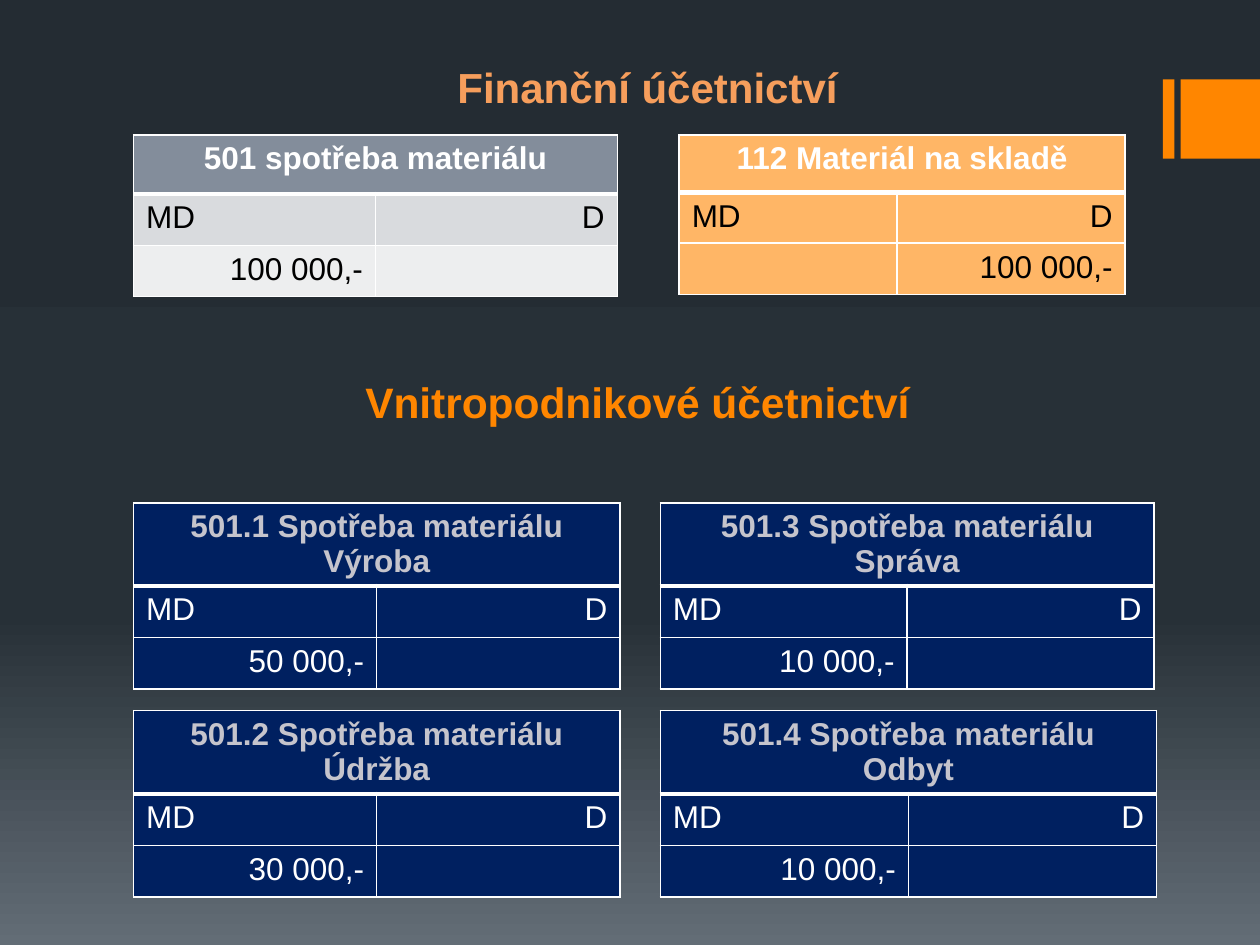
from copy import deepcopy

from lxml.etree import SubElement
from pptx import Presentation
from pptx.dml.color import RGBColor
from pptx.enum.shapes import MSO_SHAPE as Shape
from pptx.enum.text import MSO_ANCHOR as Anchor, MSO_AUTO_SIZE as AutoSize, PP_ALIGN as Align
from pptx.oxml.ns import qn
from pptx.util import Inches, Pt

ORANGE, WHITE, BLACK, NAVY, PALE = "FF8600", "FFFFFF", "000000", "002060", "C5C4CC"
APRICOT = "FFB666"


def color(value):
    return RGBColor.from_string(value)


def set_attributes(target, values):
    for name, value in values.items():
        setattr(target, name, value)


class SlideBuilder:
    font_name = "Arial"
    table_size = 18

    def __init__(self, presentation):
        self.slide = presentation.slides.add_slide(presentation.slide_layouts[1])

    def background(self, stops):
        fill = self.slide.background.fill
        fill.gradient()
        fill.gradient_angle = 270
        stop_list = next(self.slide.element.iter(qn("a:gsLst")))
        while len(stop_list) < len(stops):
            stop_list.append(deepcopy(stop_list[0]))
        for stop, (position, value) in zip(fill.gradient_stops, stops):
            stop.position = position
            stop.color.rgb = color(value)

    def rectangle(self, left, top, width, height):
        shape = self.slide.shapes.add_shape(
            Shape.RECTANGLE, *map(Inches, (left, top, width, height)))
        shape.shadow.inherit = False
        shape.fill.solid()
        shape.fill.fore_color.rgb = color(ORANGE)
        shape.line.fill.background()

    def add_text(self, paragraph, text, size, value, bold, align):
        paragraph.alignment = align
        run = paragraph.add_run()
        run.text = text
        set_attributes(run.font, {"name": self.font_name, "size": Pt(size), "bold": bold})
        run.font.color.rgb = color(value)

    def heading(self, index, text, box, size, value, anchor):
        shape = self.slide.placeholders[index]
        set_attributes(shape, dict(zip(("left", "top", "width", "height"), map(Inches, box))))
        set_attributes(shape.text_frame, {
            "word_wrap": True, "auto_size": AutoSize.NONE, "vertical_anchor": anchor})
        paragraph = shape.text_frame.paragraphs[0]
        self.add_text(paragraph, text, size, value, True, Align.CENTER)
        return paragraph

    def plain_list_item(self, paragraph, left_margin, space_before):
        paragraph.space_before = Pt(space_before)
        properties = paragraph._p.get_or_add_pPr()
        properties.set("marL", str(Inches(left_margin)))
        properties.set("indent", "0")
        SubElement(properties, qn("a:buNone"))

    def borders(self, cell, row):
        properties = cell._tc.get_or_add_tcPr()
        widths = {"L": 1, "R": 1, "T": 3 if row == 1 else 1, "B": 3 if row == 0 else 1}
        for position, (side, width) in enumerate(widths.items()):
            line = SubElement(properties, qn(f"a:ln{side}"), w=str(Pt(width)))
            fill = SubElement(line, qn("a:solidFill"))
            SubElement(fill, qn("a:srgbClr"), val=WHITE)
            properties.insert(position, line)

    def account(self, title, debit, credit, left, top, columns, rows, fills, header_color, body_color):
        frame = self.slide.shapes.add_table(
            len(rows), len(columns),
            *map(Inches, (left, top, sum(columns), sum(rows))))
        table = frame.table
        set_attributes(table, {"first_row": False, "horz_banding": False})
        for column, width in zip(table.columns, columns):
            column.width = Inches(width)
        for row, height in zip(table.rows, rows):
            row.height = Inches(height)
        table.cell(0, 0).merge(table.cell(0, 1))
        texts = [(title, ""), ("MD", "D"), (debit, credit)]
        for row, (values, fill) in enumerate(zip(texts, fills)):
            for column, text in enumerate(values):
                cell = table.cell(row, column)
                cell.fill.solid()
                cell.fill.fore_color.rgb = color(fill)
                self.borders(cell, row)
                if text:
                    header = row == 0
                    align = Align.CENTER if header else Align.LEFT if text == "MD" else Align.RIGHT
                    self.add_text(cell.text_frame.paragraphs[0], text, self.table_size,
                                  header_color if header else body_color, header, align)


def main():
    presentation = Presentation()
    set_attributes(presentation, {"slide_width": Inches(10), "slide_height": Inches(7.5)})
    builder = SlideBuilder(presentation)
    builder.background([(0, "242C33"), (0.65, "273037"), (1, "636D76")])
    for left, width in ((9.23, 0.09), (9.37, 0.63)):
        builder.rectangle(left, 0.63, width, 0.63)

    builder.heading(0, "Vnitropodnikové účetnictví", (1.06, 2.18, 8, 1.26), 24.3, ORANGE, Anchor.BOTTOM)
    financial = builder.heading(
        1, "Finanční účetnictví", (0.51, 0.44, 9.21, 0.63), 24, "F69E5C", Anchor.TOP)
    builder.plain_list_item(financial, 0.05, 4.8)

    builder.account("501 spotřeba materiálu", "100 000,-", "", 1.06, 1.07, (1.92, 1.92),
                    (0.47, 0.41, 0.4), ("838D9B", "D9DBDE", "EDEEEF"), WHITE, BLACK)
    builder.account("112 Materiál na skladě", "", "100 000,-", 5.39, 1.07, (1.73, 1.81),
                    (0.46, 0.4, 0.4), (APRICOT,) * 3, WHITE, BLACK)

    internal_accounts = [
        ("501.1", "Výroba", "50 000,-", 1.06, 3.99, 1.93),
        ("501.3", "Správa", "10 000,-", 5.24, 3.99, 1.96),
        ("501.2", "Údržba", "30 000,-", 1.06, 5.64, 1.93),
        ("501.4", "Odbyt", "10 000,-", 5.24, 5.64, 1.97),
    ]
    for number, department, amount, left, top, width in internal_accounts:
        builder.account(f"{number} Spotřeba materiálu {department}", amount, "", left, top,
                        (width, width), (0.66, 0.41, 0.41), (NAVY,) * 3, PALE, WHITE)

    presentation.save("out.pptx")


if __name__ == "__main__":
    main()
